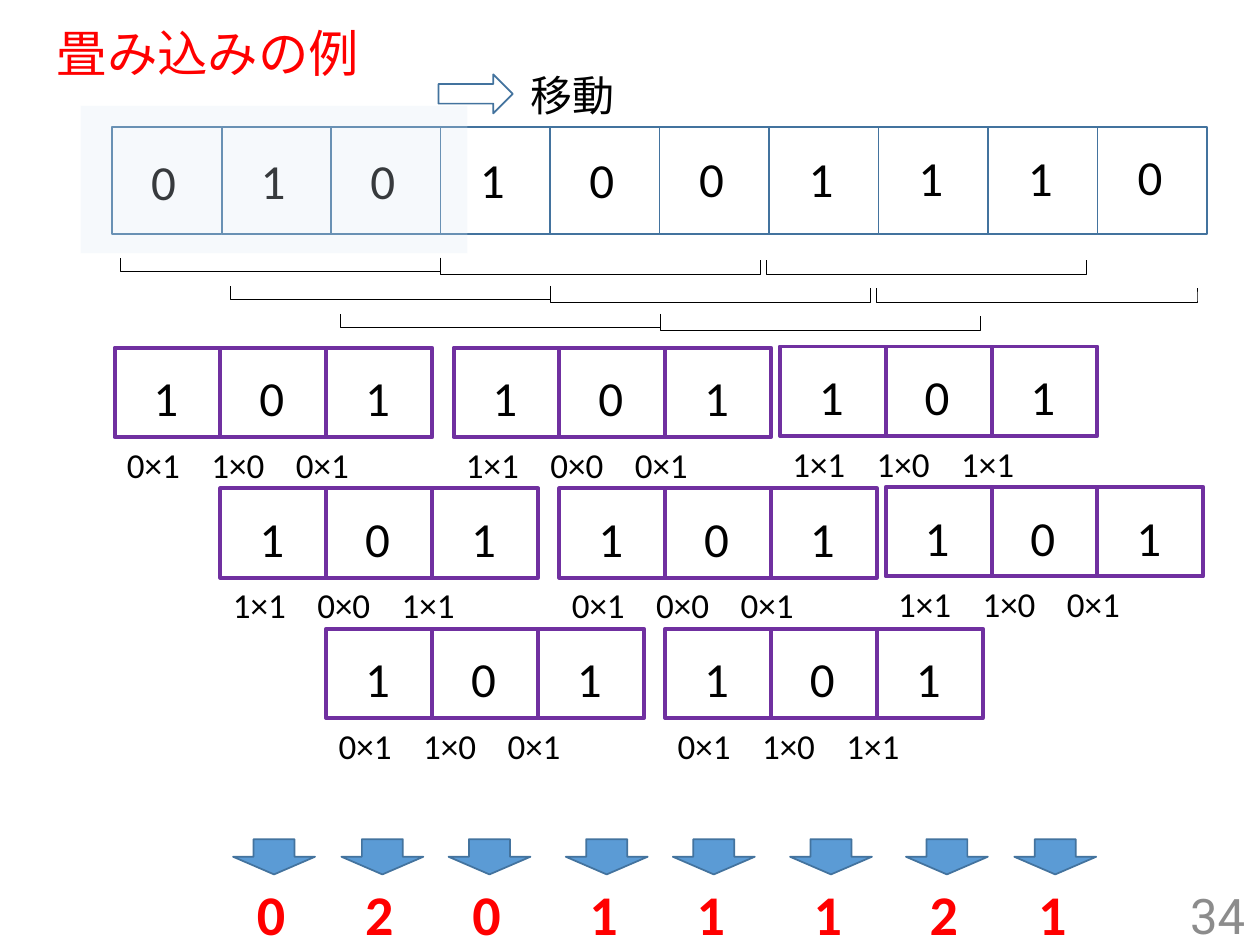
import pptx
import pptx.dml.color
import pptx.enum.shapes
import pptx.enum.text
import pptx.oxml
import pptx.oxml.ns
import pptx.util

RGB = pptx.dml.color.RGBColor
SHAPE = pptx.enum.shapes.MSO_SHAPE
ALIGN = pptx.enum.text.PP_ALIGN
ANCHOR = pptx.enum.text.MSO_ANCHOR
AUTO = pptx.enum.text.MSO_AUTO_SIZE

BLACK = RGB(0, 0, 0)
RED = RGB(0xFF, 0, 0)
GREY = RGB(0x8C, 0x8C, 0x8C)
BLUE = RGB(0x5B, 0x9B, 0xD5)
EDGE = RGB(0x43, 0x73, 0x9E)
PURPLE = RGB(0x70, 0x30, 0xA0)
PALE = RGB(0xDE, 0xEB, 0xF7)

COLS, ROWS = 100, 75
SIGNAL = "0101001110"
KERNEL = "101"
WINDOWS = ["010", "101", "010", "100", "000", "011", "111", "110"]
RESULTS = "02011121"
RESULT_LEFTS = [18.5, 27.1, 35.6, 44.9, 53.4, 62.7, 71.9, 80.5]
KERNEL_STARTS = [(9.1, 27.6), (36, 27.6), (61.9, 27.5)]
BRACKET_STARTS = [(21.7, 8.3), (47.1, 8.5), (73, 8.5)]


class Board:
    """Draws styled elements on the current slide, measured in grid columns and rows."""

    def __init__(self, prs):
        self.unit_x = prs.slide_width / COLS
        self.unit_y = prs.slide_height / ROWS
        self.s = prs.slides.add_slide(prs.slide_layouts[5])
        self.target = self.s.shapes

    def box(self, x, y, w, h):
        return (round(x * self.unit_x), round(y * self.unit_y),
                round(w * self.unit_x), round(h * self.unit_y))

    def group(self):
        self.target = self.s.shapes.add_group_shape().shapes

    def ungroup(self):
        self.target = self.s.shapes

    def run(self, p, text, size, color, font, bold=False):
        r = p.add_run()
        r.text = text
        r.font.size = pptx.util.Pt(size)
        r.font.name = font
        r.font.bold = bold
        r.font.color.rgb = color

    def title(self, text, x, y, w, h):
        sp = self.s.shapes.title
        sp.left, sp.top, sp.width, sp.height = self.box(x, y, w, h)
        tf = sp.text_frame
        tf.auto_size = AUTO.NONE
        tf.vertical_anchor = ANCHOR.MIDDLE
        p = tf.paragraphs[0]
        p.alignment = ALIGN.LEFT
        p.line_spacing = 0.9
        self.run(p, text, 28.8, RED, "Roboto")

    def text(self, text, x, y, w, h, size=28, color=BLACK, font="Calibri",
             bold=False, align=ALIGN.LEFT, anchor=ANCHOR.TOP):
        tf = self.target.add_textbox(*self.box(x, y, w, h)).text_frame
        tf.word_wrap = True
        tf.vertical_anchor = anchor
        p = tf.paragraphs[0]
        p.alignment = align
        self.run(p, text, size, color, font, bold)
        return p

    def tabbed(self, items, x, y, w, h, step):
        p = self.text("\t".join(items), x, y, w, h, size=20)
        tabs = pptx.oxml.parse_xml(f"<a:tabLst {pptx.oxml.ns.nsdecls('a')}/>")
        for i in range(1, len(items)):
            tab = tabs.makeelement(pptx.oxml.ns.qn("a:tab"),
                                   {"pos": str(round(i * step * self.unit_x)), "algn": "l"})
            tabs.append(tab)
        p._p.get_or_add_pPr().append(tabs)

    def shape(self, kind, x, y, w, h, fill=None, line=None, weight=1, alpha=None):
        sp = self.target.add_shape(kind, *self.box(x, y, w, h))
        sp.shadow.inherit = False
        if fill is None:
            sp.fill.background()
        else:
            sp.fill.solid()
            sp.fill.fore_color.rgb = fill
        if alpha is not None:
            color = sp._element.spPr.find(".//" + pptx.oxml.ns.qn("a:srgbClr"))
            color.append(color.makeelement(pptx.oxml.ns.qn("a:alpha"),
                                           {"val": str(alpha * 1000)}))
        if line is None:
            sp.line.fill.background()
        else:
            sp.line.color.rgb = line
            sp.line.width = pptx.util.Pt(weight)
        return sp

    def bracket(self, x, y, w, h):
        sp = self.shape(SHAPE.RIGHT_BRACKET, x, y, w, h, line=BLACK, weight=0.5)
        sp.adjustments[0] = 0
        sp.rotation = 90

    def kernel(self, x, y, window):
        self.group()
        for i in range(len(KERNEL)):
            self.shape(SHAPE.RECTANGLE, x + 8.4 * i, y, 8.4, 7.1, line=PURPLE, weight=2.25)
        for i, digit in enumerate(KERNEL):
            self.text(digit, x + 8.4 * i + 2.1, y + 1.1, 4.3, 4.7)
        products = [f"{a}×{b}" for a, b in zip(window, KERNEL)]
        self.tabbed(products, x, y + 7.1, 24, 4.4, 6.7)
        self.ungroup()

    def result(self, x, digit):
        self.shape(SHAPE.DOWN_ARROW, x, 66.6, 6.5, 2.8, fill=BLUE, line=EDGE)
        self.text(digit, x + 0.9, 69.3, 4.6, 6.4, size=32, color=RED, bold=True)


def main():
    prs = pptx.Presentation()
    prs.slide_width = pptx.util.Inches(10)
    prs.slide_height = pptx.util.Inches(7.5)
    board = Board(prs)
    board.title("畳み込みの例", 3.5, 1.9, 92.5, 5.1)
    board.text("34", 77.3, 70.6, 22.5, 4, color=GREY, font="Roboto",
               align=ALIGN.RIGHT, anchor=ANCHOR.MIDDLE)

    for i in range(len(SIGNAL)):
        board.shape(SHAPE.RECTANGLE, 8.9 + 8.69 * i, 10.1, 8.69, 8.5, line=EDGE)
    for i, digit in enumerate(SIGNAL):
        board.text(digit, 11 + 8.7 * i, 11.5 - 0.04 * i, 4.5, 5.7)
    board.shape(SHAPE.RECTANGLE, 6.4, 8.4, 30.7, 11.7, fill=PALE, alpha=25)

    for i, window in enumerate(WINDOWS):
        block, step = divmod(i, 3)
        x, y = BRACKET_STARTS[block]
        board.bracket(x + 8.75 * step, y + 2.23 * step, 1.1, 25.4)
        x, y = KERNEL_STARTS[block]
        board.kernel(x + 8.4 * step, y + 11.15 * step, window)

    for x, digit in zip(RESULT_LEFTS, RESULTS):
        board.result(x, digit)

    board.shape(SHAPE.RIGHT_ARROW, 34.8, 5.9, 5.9, 3.1, line=EDGE)
    board.text("移動", 41.1, 5, 10.1, 5, size=24)
    prs.save("out.pptx")


if __name__ == "__main__":
    main()
